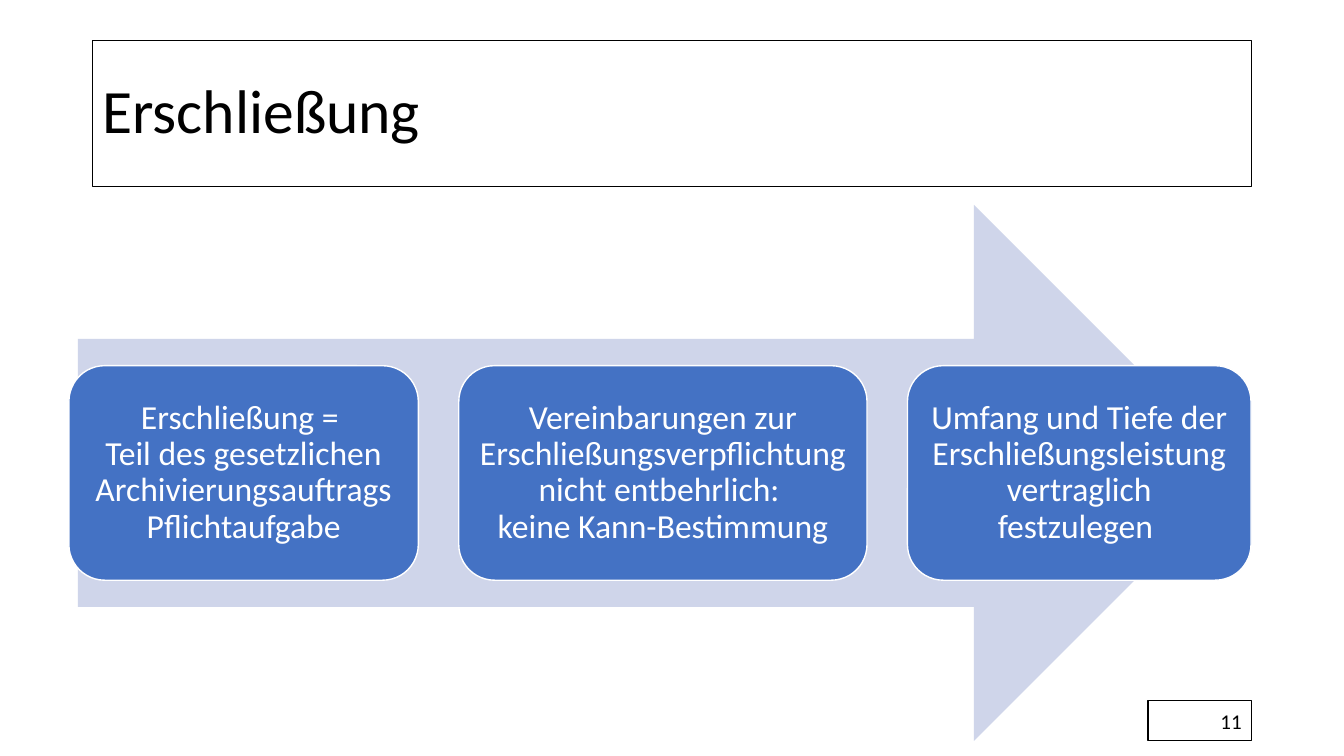
from dataclasses import dataclass

from pptx import Presentation
from pptx.dml.color import RGBColor
from pptx.enum.shapes import MSO_SHAPE
from pptx.enum.text import MSO_ANCHOR, PP_ALIGN
from pptx.util import Pt


@dataclass(frozen=True)
class Theme:
    font: str = "Calibri"
    black: RGBColor = RGBColor(0x00, 0x00, 0x00)
    white: RGBColor = RGBColor(0xFF, 0xFF, 0xFF)
    step: RGBColor = RGBColor(0x44, 0x72, 0xC4)
    arrow: RGBColor = RGBColor(0xCF, 0xD5, 0xEA)
    title_size: int = 44
    step_size: int = 24
    number_size: int = 15


THEME = Theme()
STEP_TOP, STEP_HEIGHT, STEP_GAP = 261.2, 153.2, 28.9
STEPS_LEFT = 49.2
STEPS = [
    (249.6, "Erschließung = \vTeil des gesetzlichen Archivierungsauftrags Pflichtaufgabe"),
    (291.6, "Vereinbarungen zur Erschließungsverpflichtung nicht entbehrlich: \v"
            "keine Kann-Bestimmung"),
    (245.4, "Umfang und Tiefe der Erschließungsleistung vertraglich festzulegen "),
]


def apply_format(target, values):
    for attribute, value in values.items():
        setattr(target, attribute, value)


def add_figure(slide, preset, box, fill, line=None, line_width=1):
    figure = slide.shapes.add_shape(preset, *map(Pt, box))
    figure.shadow.inherit = False
    figure.fill.solid()
    figure.fill.fore_color.rgb = fill
    if line is None:
        figure.line.fill.background()
    else:
        figure.line.color.rgb = line
        figure.line.width = Pt(line_width)
    return figure


def write_text(figure, text, size, color, align, spacing=1.0, inset=7.2):
    frame = figure.text_frame
    apply_format(frame, {
        "word_wrap": True,
        "vertical_anchor": MSO_ANCHOR.MIDDLE,
        "margin_left": Pt(inset),
        "margin_right": Pt(inset),
        "margin_top": Pt(3.6),
        "margin_bottom": Pt(3.6),
    })
    paragraph = frame.paragraphs[0]
    paragraph.text = text
    apply_format(paragraph, {"alignment": align, "line_spacing": spacing})
    for run in paragraph.runs:
        apply_format(run.font, {"name": THEME.font, "size": Pt(size)})
        run.font.color.rgb = color


def add_title(slide, text):
    title = add_figure(slide, MSO_SHAPE.RECTANGLE, (66, 28.8, 828, 104.4),
                       THEME.white, THEME.black)
    write_text(title, text, THEME.title_size, THEME.black, PP_ALIGN.LEFT, 0.9)


def add_page_number(slide, text):
    number = add_figure(slide, MSO_SHAPE.RECTANGLE, (820, 500.4, 74, 28.8),
                        THEME.white, THEME.black, 0.75)
    write_text(number, text, THEME.number_size, THEME.black, PP_ALIGN.RIGHT)


def add_steps(slide):
    left = STEPS_LEFT
    for width, text in STEPS:
        step = add_figure(slide, MSO_SHAPE.ROUNDED_RECTANGLE,
                          (left, STEP_TOP, width, STEP_HEIGHT), THEME.step, THEME.white)
        write_text(step, text, THEME.step_size, THEME.white, PP_ALIGN.CENTER, 0.9, 7)
        left += width + STEP_GAP


def main():
    presentation = Presentation()
    apply_format(presentation, {"slide_width": Pt(960), "slide_height": Pt(540)})
    slide = presentation.slides.add_slide(presentation.slide_layouts[6])
    add_title(slide, "Erschließung")
    add_page_number(slide, "11")
    add_figure(slide, MSO_SHAPE.RIGHT_ARROW, (55.6, 146.3, 831.6, 383), THEME.arrow)
    add_steps(slide)
    presentation.save("out.pptx")


if __name__ == "__main__":
    main()
